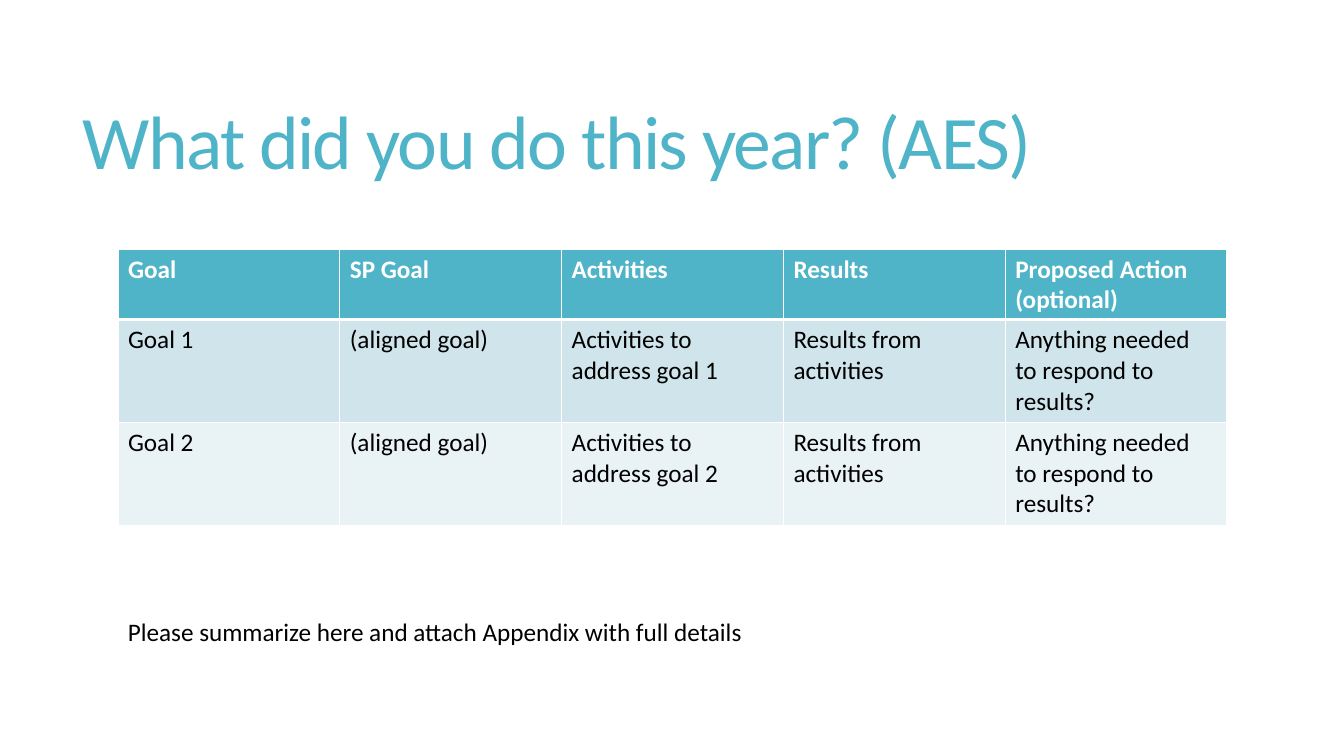
from lxml.etree import SubElement
from pptx import Presentation
from pptx.dml.color import RGBColor as Rgb
from pptx.enum.text import MSO_ANCHOR as Anchor, MSO_AUTO_SIZE as Auto
from pptx.oxml.ns import qn
from pptx.util import Inches, Pt

FONT = "Calibri"
HUES = {
    "teal": "50B4C8",
    "band": "D0E5EB",
    "pale": "E9F2F5",
    "white": "FFFFFF",
    "black": "000000",
}
HEAD = ["Goal", "SP Goal", "Activities", "Results", "Proposed Action (optional)"]
GOALS = [
    [f"Goal {n}", "(aligned goal)", f"Activities to address goal {n}",
     "Results from activities", "Anything needed to respond to results?"]
    for n in (1, 2)
]


def hue(name):
    return Rgb.from_string(HUES[name])


def style(para, size, color, bold=False):
    font = para.font
    font.name, font.size, font.bold = FONT, Pt(size), bold
    font.color.rgb = hue(color)


def add_text(slide, box, text, size, color):
    shape = slide.shapes.add_textbox(*map(Inches, box))
    frame = shape.text_frame
    frame.word_wrap = True
    para = frame.paragraphs[0]
    para.text = text
    style(para, size, color)
    return frame


def add_title(slide, box, text):
    frame = add_text(slide, box, text, 54, "teal")
    frame.vertical_anchor = Anchor.MIDDLE
    para = frame.paragraphs[0]
    para.line_spacing = 0.85
    # Tighten the letter spacing
    para.runs[0].font._element.set("spc", "-120")


def add_note(slide, box, text):
    frame = add_text(slide, box, text, 18, "black")
    frame.auto_size = Auto.SHAPE_TO_FIT_TEXT


def set_edges(cell, widths):
    # Borders must come before the fill
    props = cell._tc.get_or_add_tcPr()
    for spot, (side, width) in enumerate(widths.items()):
        line = SubElement(props, qn(f"a:ln{side}"), w=str(Pt(width)))
        fill = SubElement(line, qn("a:solidFill"))
        SubElement(fill, qn("a:srgbClr"), val=HUES["white"])
        props.insert(spot, line)


def add_goals(slide, box, rows, heights):
    count = len(rows[0])
    frame = slide.shapes.add_table(len(rows), count, *map(Inches, box))
    table = frame.table
    for col in table.columns:
        col.width = Inches(box[2] / count)
    fills = ["teal", "band", "pale"]
    for r, texts in enumerate(rows):
        table.rows[r].height = Inches(heights[r])
        # Thick rule between header and body
        edges = {"L": 1, "R": 1, "T": 3 if r == 1 else 1, "B": 3 if r == 0 else 1}
        for c, text in enumerate(texts):
            cell = table.cell(r, c)
            cell.text = text
            style(cell.text_frame.paragraphs[0], 18,
                  "black" if r else "white", bold=r == 0)
            cell.fill.solid()
            cell.fill.fore_color.rgb = hue(fills[r])
            set_edges(cell, edges)


def main():
    deck = Presentation()
    deck.slide_width, deck.slide_height = Inches(13.33), Inches(7.5)
    slide = deck.slides.add_slide(deck.slide_layouts[6])
    left, width = 1.17, 11

    # Title
    add_title(slide, (0.72, 0.55, 11.78, 1.81), "What did you do this year? (AES)")
    # Goals table
    heights = [0.7, 1.02, 1.02]
    add_goals(slide, (left, 2.47, width, sum(heights)), [HEAD, *GOALS], heights)
    # Closing note
    add_note(slide, (left, 6.07, width, 0.4),
             "Please summarize here and attach Appendix with full details")

    deck.save("out.pptx")


if __name__ == "__main__":
    main()
